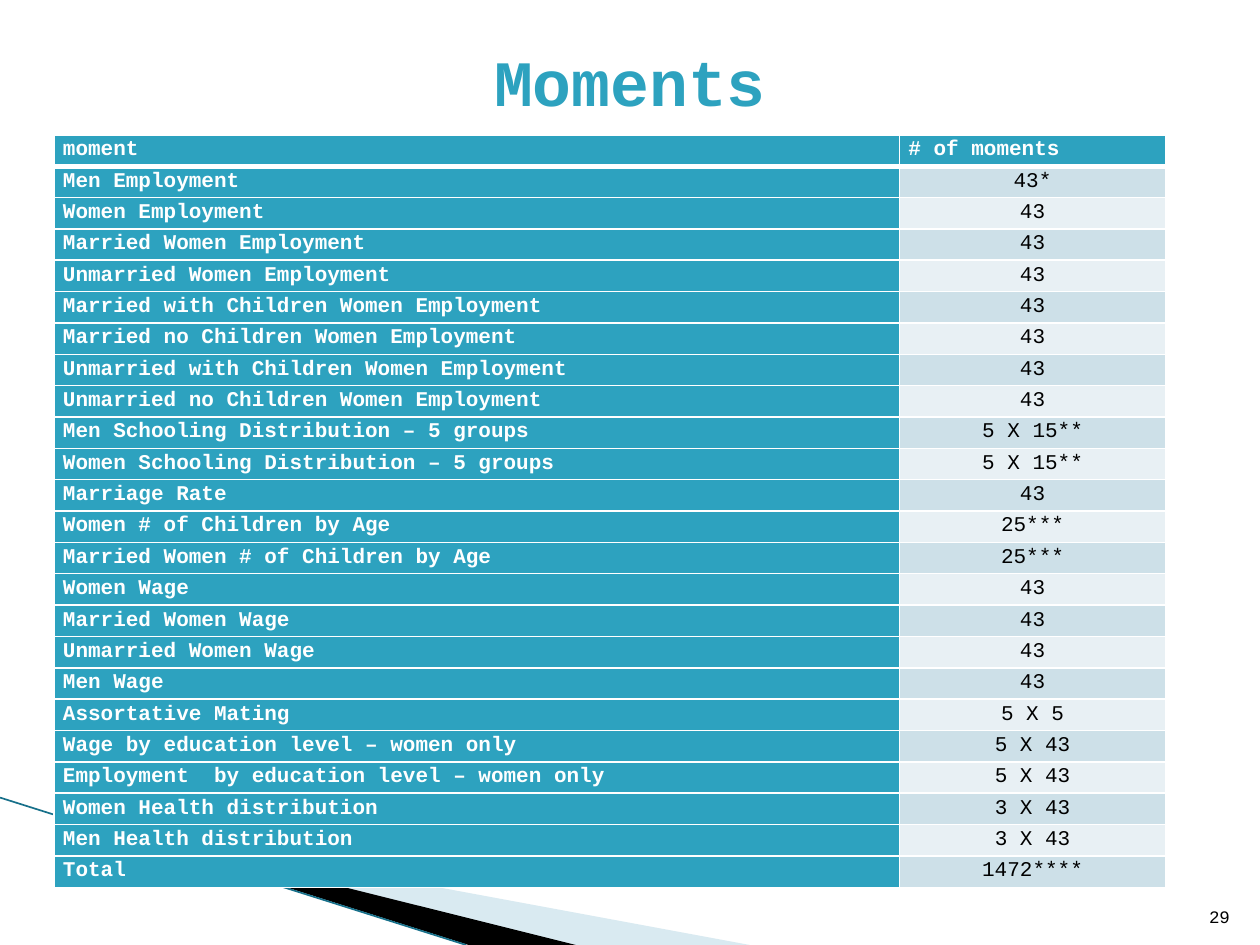
from dataclasses import dataclass

from lxml import etree
from pptx import Presentation
from pptx.dml.color import RGBColor
from pptx.enum.shapes import MSO_CONNECTOR
from pptx.enum.text import MSO_ANCHOR as Anchor, PP_ALIGN as Align
from pptx.oxml.ns import qn
from pptx.util import Inches, Pt


@dataclass(frozen=True)
class Theme:
    font: str = "Courier New"
    accent: str = "2DA2BF"
    band_dark: str = "CDE0E8"
    band_light: str = "E8F0F4"
    swoosh: str = "A0CBDC"
    swoosh_line: str = "17708A"
    black: str = "000000"
    white: str = "FFFFFF"
    title_size: int = 37
    table_size: int = 12
    number_size: int = 10


THEME = Theme()

HEADER = ("moment", "# of moments")
MOMENTS = [
    ("Men Employment", "43*"),
    ("Women Employment", "43"),
    ("Married Women Employment", "43"),
    ("Unmarried Women Employment", "43"),
    ("Married with Children Women Employment", "43"),
    ("Married no Children Women Employment", "43"),
    ("Unmarried with Children Women Employment", "43"),
    ("Unmarried no Children Women Employment", "43"),
    ("Men Schooling Distribution – 5 groups", "5 X 15**"),
    ("Women Schooling Distribution – 5 groups", "5 X 15**"),
    ("Marriage Rate", "43"),
    ("Women # of Children by Age", "25***"),
    ("Married Women # of Children by Age", "25***"),
    ("Women Wage", "43"),
    ("Married Women Wage", "43"),
    ("Unmarried Women Wage", "43"),
    ("Men Wage", "43"),
    ("Assortative Mating", "5 X 5"),
    ("Wage by education level – women only", "5 X 43"),
    ("Employment  by education level – women only", "5 X 43"),
    ("Women Health distribution", "3 X 43"),
    ("Men Health distribution", "3 X 43"),
    ("Total", "1472****"),
]


def rgb(color):
    return RGBColor.from_string(color)


def style_paragraph(paragraph, size, color, bold=False, align=Align.LEFT):
    paragraph.alignment = align
    font = paragraph.font
    font.name = THEME.font
    font.size = Pt(size)
    font.bold = bold
    font.color.rgb = rgb(color)


def add_text(slide, text, box, anchor, **style):
    shape = slide.shapes.add_textbox(*map(Inches, box))
    frame = shape.text_frame
    frame.word_wrap = True
    frame.vertical_anchor = anchor
    frame.text = text
    style_paragraph(frame.paragraphs[0], **style)


def add_polygon(slide, points, color, opacity=100):
    corners = [(Inches(x), Inches(y)) for x, y in points]
    builder = slide.shapes.build_freeform(*corners[0])
    builder.add_line_segments(corners[1:], close=True)
    shape = builder.convert_to_shape()
    shape.shadow.inherit = False
    shape.line.fill.background()
    shape.fill.solid()
    shape.fill.fore_color.rgb = rgb(color)
    if opacity < 100:
        color_element = shape.fill._xPr.find(".//" + qn("a:srgbClr"))
        etree.SubElement(color_element, qn("a:alpha"), val=str(opacity * 1000))


def add_line(slide, start, end, color, width):
    line = slide.shapes.add_connector(
        MSO_CONNECTOR.STRAIGHT, *map(Inches, start + end))
    line.line.color.rgb = rgb(color)
    line.line.width = Pt(width)
    etree.SubElement(line._element.spPr, qn("a:effectLst"))


def set_borders(cell, top=1, bottom=1):
    properties = cell._tc.get_or_add_tcPr()
    widths = {"a:lnL": 1, "a:lnR": 1, "a:lnT": top, "a:lnB": bottom}
    for index, (tag, width) in enumerate(widths.items()):
        border = etree.Element(qn(tag), w=str(Pt(width)))
        fill = etree.SubElement(border, qn("a:solidFill"))
        etree.SubElement(fill, qn("a:srgbClr"), val=THEME.white)
        properties.insert(index, border)


def fill_cell(cell, text, fill, color, bold, align):
    cell.margin_left = cell.margin_right = Inches(0.07)
    cell.margin_top = cell.margin_bottom = 0
    cell.fill.solid()
    cell.fill.fore_color.rgb = rgb(fill)
    cell.text = text
    paragraph = cell.text_frame.paragraphs[0]
    paragraph.line_spacing = 1.15
    style_paragraph(paragraph, THEME.table_size, color, bold, align)


def add_moments_table(slide):
    rows = [HEADER] + MOMENTS
    height = Inches(5.98)
    table = slide.shapes.add_table(
        len(rows), 2, Inches(0.43), Inches(1.07), Inches(8.82), height).table
    for column, width in zip(table.columns, (6.71, 2.11)):
        column.width = Inches(width)
    for r, values in enumerate(rows):
        table.rows[r].height = height // len(rows)
        band = THEME.band_dark if r % 2 else THEME.band_light
        for c, text in enumerate(values):
            cell = table.cell(r, c)
            if r == 0 or c == 0:
                fill_cell(cell, text, THEME.accent, THEME.white, True, Align.LEFT)
            else:
                fill_cell(cell, text, band, THEME.black, False, Align.CENTER)
            # A thick rule separates the header from the body
            set_borders(cell, top=3 if r == 1 else 1, bottom=3 if r == 0 else 1)


def main():
    presentation = Presentation()
    presentation.slide_width = Inches(10)
    presentation.slide_height = Inches(7.5)
    slide = presentation.slides.add_slide(presentation.slide_layouts[6])

    # Corner decoration
    add_polygon(slide, [(0.55, 6.5), (5.95, 7.5), (4.56, 7.5)],
                THEME.swoosh, opacity=40)
    add_polygon(slide, [(0.53, 6.49), (4.57, 7.5), (3.72, 7.5)], THEME.black)
    add_line(slide, (0, 6.33), (3.7, 7.5), THEME.swoosh_line, 0.95)

    # Page number and title
    add_text(slide, "29", (9.46, 7.01, 0.4, 0.4), Anchor.BOTTOM,
             size=THEME.number_size, color=THEME.black, align=Align.RIGHT)
    add_text(slide, "Moments", (0, 0.13, 10, 1.02), Anchor.MIDDLE,
             size=THEME.title_size, color=THEME.accent, bold=True,
             align=Align.CENTER)

    # Table of moments
    add_moments_table(slide)

    presentation.save("out.pptx")


if __name__ == "__main__":
    main()
